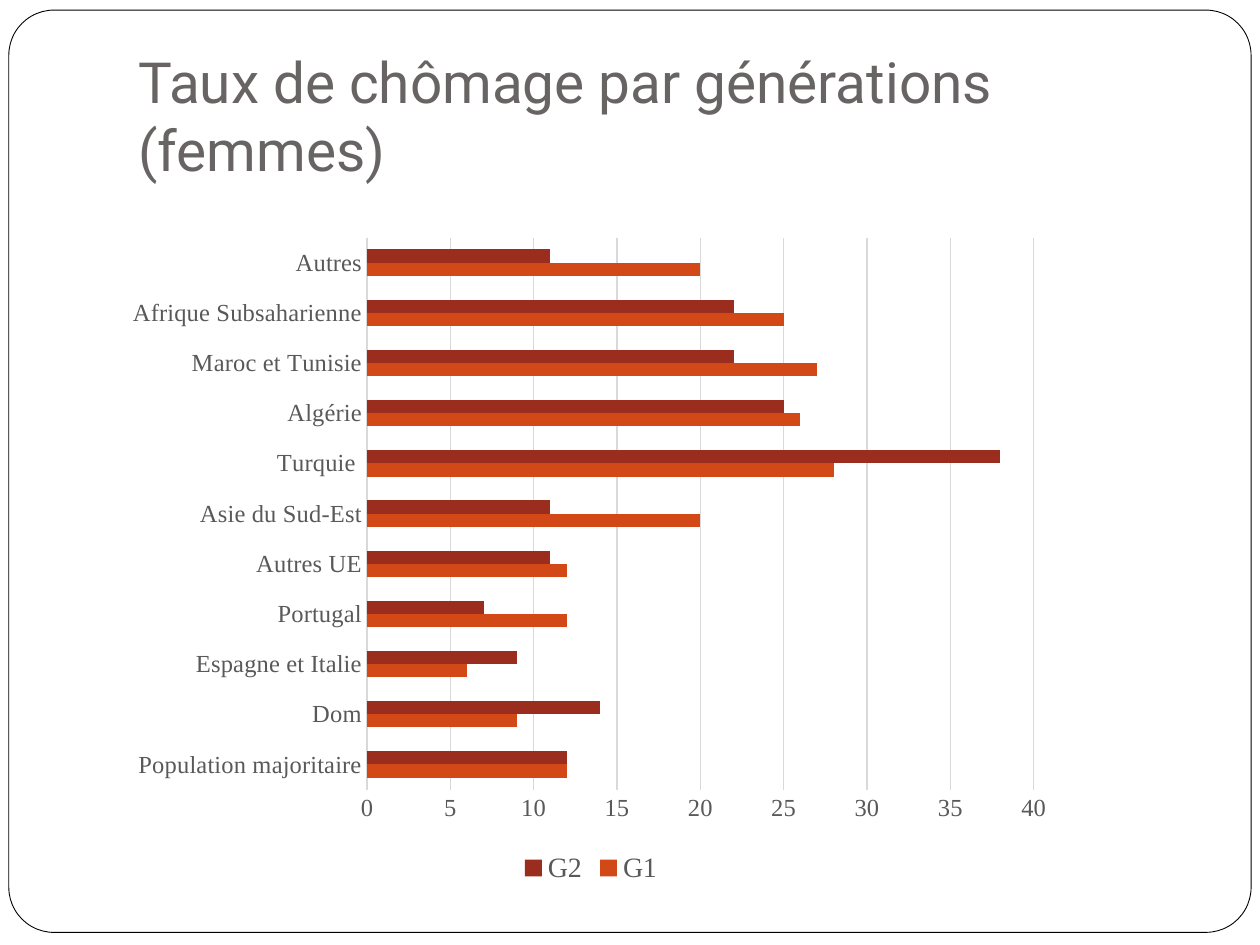
from lxml import etree
from pptx import Presentation
from pptx.chart.data import CategoryChartData
from pptx.dml.color import RGBColor
from pptx.enum.chart import XL_CHART_TYPE, XL_LEGEND_POSITION, XL_TICK_MARK
from pptx.enum.shapes import MSO_SHAPE
from pptx.enum.text import MSO_ANCHOR
from pptx.oxml.ns import qn
from pptx.util import Inches, Pt

WHITE = RGBColor(0xFF, 0xFF, 0xFF)
BLACK = RGBColor(0x00, 0x00, 0x00)
TITLE_GRAY = RGBColor(0x69, 0x64, 0x64)
LABEL_GRAY = RGBColor(0x59, 0x59, 0x59)
GRID_GRAY = RGBColor(0xD9, 0xD9, 0xD9)
ORANGE = RGBColor(0xD3, 0x48, 0x17)
DARK_RED = RGBColor(0x9B, 0x2D, 0x1F)
CHART_FONT = "Times New Roman"


def style_font(font, name, size, color):
    font.name = name
    font.size = Pt(size)
    font.color.rgb = color


deck = Presentation()
deck.slide_width = Inches(10)
deck.slide_height = Inches(7.5)
page = deck.slides.add_slide(deck.slide_layouts[6])

frame = page.shapes.add_shape(
    MSO_SHAPE.ROUNDED_RECTANGLE, Inches(0.07), Inches(0.08), Inches(9.86), Inches(7.32)
)
frame.adjustments[0] = 0.049
frame.shadow.inherit = False
frame.fill.solid()
frame.fill.fore_color.rgb = WHITE
frame.line.color.rgb = BLACK
frame.line.width = Pt(0.5)

title = page.shapes.add_textbox(Inches(1), Inches(0.3), Inches(8.5), Inches(1.25))
title_text = title.text_frame
title_text.word_wrap = True
title_text.vertical_anchor = MSO_ANCHOR.BOTTOM
title_text.margin_bottom = Inches(0.1)
title_text.text = "Taux de chômage par générations (femmes)"
style_font(title_text.paragraphs[0].runs[0].font, "Roboto", 32.4, TITLE_GRAY)

rates = CategoryChartData()
rates.categories = [
    "Population majoritaire", "Dom", "Espagne et Italie", "Portugal",
    "Autres UE", "Asie du Sud-Est", "Turquie ", "Algérie",
    "Maroc et Tunisie", "Afrique Subsaharienne", "Autres",
]
rates.add_series("G1", [12, 9, 6, 12, 12, 20, 28, 26, 27, 25, 20])
rates.add_series("G2", [12, 14, 9, 7, 11, 11, 38, 25, 22, 22, 11])

chart = page.shapes.add_chart(
    XL_CHART_TYPE.BAR_CLUSTERED,
    Inches(0.91), Inches(1.78), Inches(7.56), Inches(5.28), rates,
).chart
chart.has_title = False
style_font(chart.font, CHART_FONT, 10, BLACK)

plot = chart.plots[0]
plot.gap_width = 182
plot.overlap = 0
plot.vary_by_categories = False
for series, color in zip(plot.series, (ORANGE, DARK_RED)):
    series.format.fill.solid()
    series.format.fill.fore_color.rgb = color

for axis in (chart.category_axis, chart.value_axis):
    axis.major_tick_mark = XL_TICK_MARK.NONE
    axis.minor_tick_mark = XL_TICK_MARK.NONE
    style_font(axis.tick_labels.font, CHART_FONT, 14, LABEL_GRAY)

chart.value_axis.minimum_scale = 0
chart.value_axis.maximum_scale = 40
chart.value_axis.major_unit = 5
chart.value_axis.format.line.fill.background()
chart.value_axis.has_major_gridlines = True
for line in (chart.category_axis.format.line, chart.value_axis.major_gridlines.format.line):
    line.color.rgb = GRID_GRAY
    line.width = Pt(0.75)

chart.has_legend = True
chart.legend.position = XL_LEGEND_POSITION.BOTTOM
chart.legend.include_in_layout = False
style_font(chart.legend.font, CHART_FONT, 16, LABEL_GRAY)

plot_area = chart.element.find(".//" + qn("c:plotArea"))
for old_layout in plot_area.findall(qn("c:layout")):
    plot_area.remove(old_layout)
layout = etree.Element(qn("c:layout"))
plot_area.insert(0, layout)
manual = etree.SubElement(layout, qn("c:manualLayout"))
for tag, value in (
    ("layoutTarget", "inner"), ("xMode", "edge"), ("yMode", "edge"),
    ("x", "0.265"), ("y", "0.02"), ("w", "0.7"), ("h", "0.83"),
):
    etree.SubElement(manual, qn("c:" + tag)).set("val", value)

deck.save("out.pptx")
